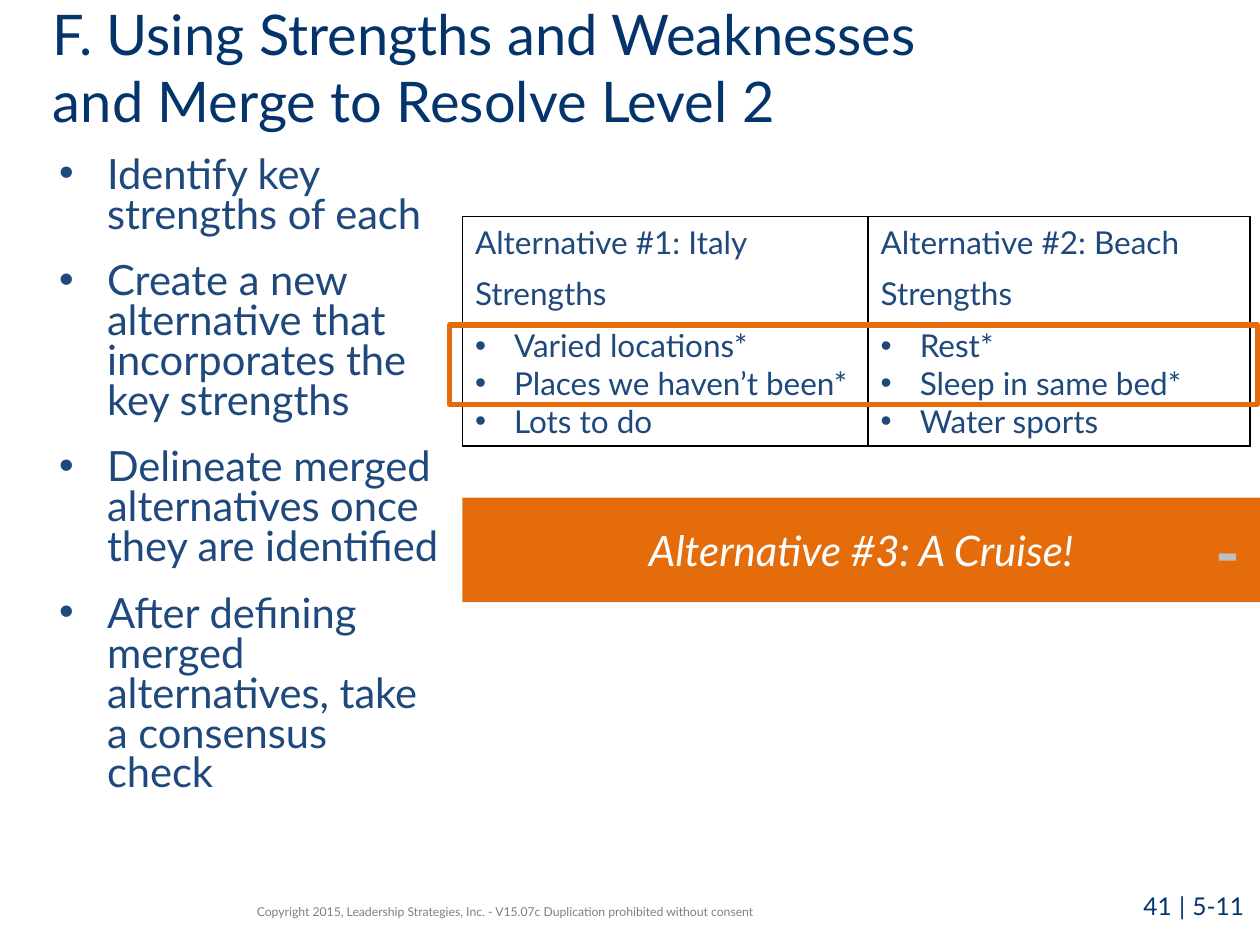
import pptx
import pptx.dml.color
import pptx.enum.shapes
import pptx.enum.text
import pptx.oxml
import pptx.oxml.ns
import pptx.util
from dataclasses import dataclass

Inches = pptx.util.Inches
Pt = pptx.util.Pt
Align = pptx.enum.text.PP_ALIGN
Anchor = pptx.enum.text.MSO_ANCHOR
RECTANGLE = pptx.enum.shapes.MSO_SHAPE.RECTANGLE
NS = pptx.oxml.ns.nsdecls("a")


@dataclass(frozen=True)
class Theme:
    font: str = "Lato"
    alt_font: str = "Calibri"
    navy: str = "04346C"
    blue: str = "1F497D"
    orange: str = "E46C0A"
    grey: str = "808080"
    silver: str = "BFBFBF"
    white: str = "FFFFFF"
    black: str = "000000"
    title: float = 32
    body: float = 23.8
    banner: float = 24
    table: float = 18
    number: float = 14
    copyright: float = 7
    dash: float = 40


theme = Theme()


def style(font, size, color, name=theme.font):
    font.name = name
    font.size = Pt(size)
    font.color.rgb = pptx.dml.color.RGBColor.from_string(color)


def add_bullet(p, indent):
    """Give the paragraph a round bullet with a hanging indent."""
    pPr = p._p.get_or_add_pPr()
    pPr.set("marL", str(Inches(indent)))
    pPr.set("indent", str(-Inches(indent)))
    pPr.append(pptx.oxml.parse_xml(f'<a:buFont {NS} typeface="Arial"/>'))
    pPr.append(pptx.oxml.parse_xml(f'<a:buChar {NS} char="•"/>'))


prs = pptx.Presentation()
prs.slide_width, prs.slide_height = Inches(10), Inches(7.5)
s = prs.slides.add_slide(prs.slide_layouts[1])

# Title
title = s.shapes.title
title.left, title.top = Inches(0.32), Inches(0)
title.width, title.height = Inches(7.46), Inches(1.06)
tf = title.text_frame
tf.text = "F. Using Strengths and Weaknesses and Merge to Resolve Level 2"
tf.auto_size = pptx.enum.text.MSO_AUTO_SIZE.NONE
tf.vertical_anchor = Anchor.MIDDLE
tf.paragraphs[0].alignment = Align.LEFT
style(tf.paragraphs[0].runs[0].font, theme.title, theme.navy)

# Steps
body = s.placeholders[1]
body.left, body.top = Inches(0.37), Inches(1.2)
body.width, body.height = Inches(3.22), Inches(5.5)
tf = body.text_frame
tf.text = "\n".join([
    "Identify key strengths of each",
    "Create a new alternative that incorporates the key strengths",
    "Delineate merged alternatives once they are identified",
    "After defining merged alternatives, take a consensus check",
])
tf.auto_size = pptx.enum.text.MSO_AUTO_SIZE.NONE
for i, p in enumerate(tf.paragraphs):
    p.line_spacing = 0.8
    p.space_before = Pt(15 if i else 0)
    add_bullet(p, 0.38)
    style(p.runs[0].font, theme.body, theme.blue)

# Alternatives table
alternatives = [
    ("Alternative #1: Italy", "Strengths",
     "Varied locations*\nPlaces we haven’t been*\nLots to do"),
    ("Alternative #2: Beach", "Strengths",
     "Rest*\nSleep in same bed*\nWater sports"),
]
col_widths = [3.22, 3.03]
row_heights = [0.41, 0.41, 0.99]
last_row = len(row_heights) - 1
table = s.shapes.add_table(len(row_heights), len(col_widths), Inches(3.67), Inches(1.72),
                           Inches(sum(col_widths)), Inches(sum(row_heights))).table
table.first_row = table.horz_banding = False
for row, height in zip(table.rows, row_heights):
    row.height = Inches(height)
for c, (width, texts) in enumerate(zip(col_widths, alternatives)):
    table.columns[c].width = Inches(width)
    for r, text in enumerate(texts):
        cell = table.cell(r, c)
        cell.text_frame.text = text
        cell.fill.background()
        for p in cell.text_frame.paragraphs:
            if r == last_row:
                add_bullet(p, 0.31)
            style(p.runs[0].font, theme.table, theme.blue)
        # Only the outline and the column divider are ruled
        ruled = {"lnL": True, "lnR": True, "lnT": r == 0, "lnB": r == last_row}
        for i, (side, on) in enumerate(ruled.items()):
            paint = (f'<a:solidFill><a:srgbClr val="{theme.black}"/></a:solidFill>'
                     if on else "<a:noFill/>")
            line = pptx.oxml.parse_xml(f'<a:{side} {NS} w="{Pt(1)}">{paint}</a:{side}>')
            cell._tc.get_or_add_tcPr().insert(i, line)

# Frame around the key strengths
frame = s.shapes.add_shape(RECTANGLE, Inches(3.57), Inches(2.58), Inches(6.41), Inches(0.63))
frame.shadow.inherit = False
frame.fill.background()
frame.line.color.rgb = pptx.dml.color.RGBColor.from_string(theme.orange)
frame.line.width = Pt(3)

# Merged alternative
banner = s.shapes.add_shape(RECTANGLE, Inches(3.67), Inches(3.95), Inches(6.33), Inches(0.83))
banner.shadow.inherit = False
banner.fill.solid()
banner.fill.fore_color.rgb = pptx.dml.color.RGBColor.from_string(theme.orange)
banner.line.fill.background()
tf = banner.text_frame
tf.text = "Alternative #3: A Cruise!"
tf.vertical_anchor = Anchor.MIDDLE
p = tf.paragraphs[0]
p.alignment = Align.CENTER
style(p.runs[0].font, theme.banner, theme.white)
p.runs[0].font.italic = True

dash = s.shapes.add_textbox(Inches(9.56), Inches(3.98), Inches(0.73), Inches(0.77))
tf = dash.text_frame
tf.word_wrap = True
tf.text = "-"
style(tf.paragraphs[0].runs[0].font, theme.dash, theme.silver, theme.alt_font)
tf.paragraphs[0].runs[0].font.bold = True

# Footer
notice = s.shapes.add_textbox(Inches(1.94), Inches(7.08), Inches(4.64), Inches(0.31))
tf = notice.text_frame
tf.word_wrap = True
tf.vertical_anchor = Anchor.MIDDLE
tf.text = ("Copyright 2015, Leadership Strategies, Inc. - V15.07c "
           "Duplication prohibited without consent")
style(tf.paragraphs[0].runs[0].font, theme.copyright, theme.grey)

number = s.shapes.add_textbox(Inches(8.95), Inches(6.97), Inches(1.05), Inches(0.53))
tf = number.text_frame
tf.word_wrap = True
p = tf.paragraphs[0]
p.alignment = Align.CENTER
for text in ("41", " ", "|", " ", "5-11"):
    r = p.add_run()
    r.text = text
    if text == " ":
        style(r.font, theme.table, theme.black, theme.alt_font)
    else:
        style(r.font, theme.number, theme.navy)

prs.save("out.pptx")
